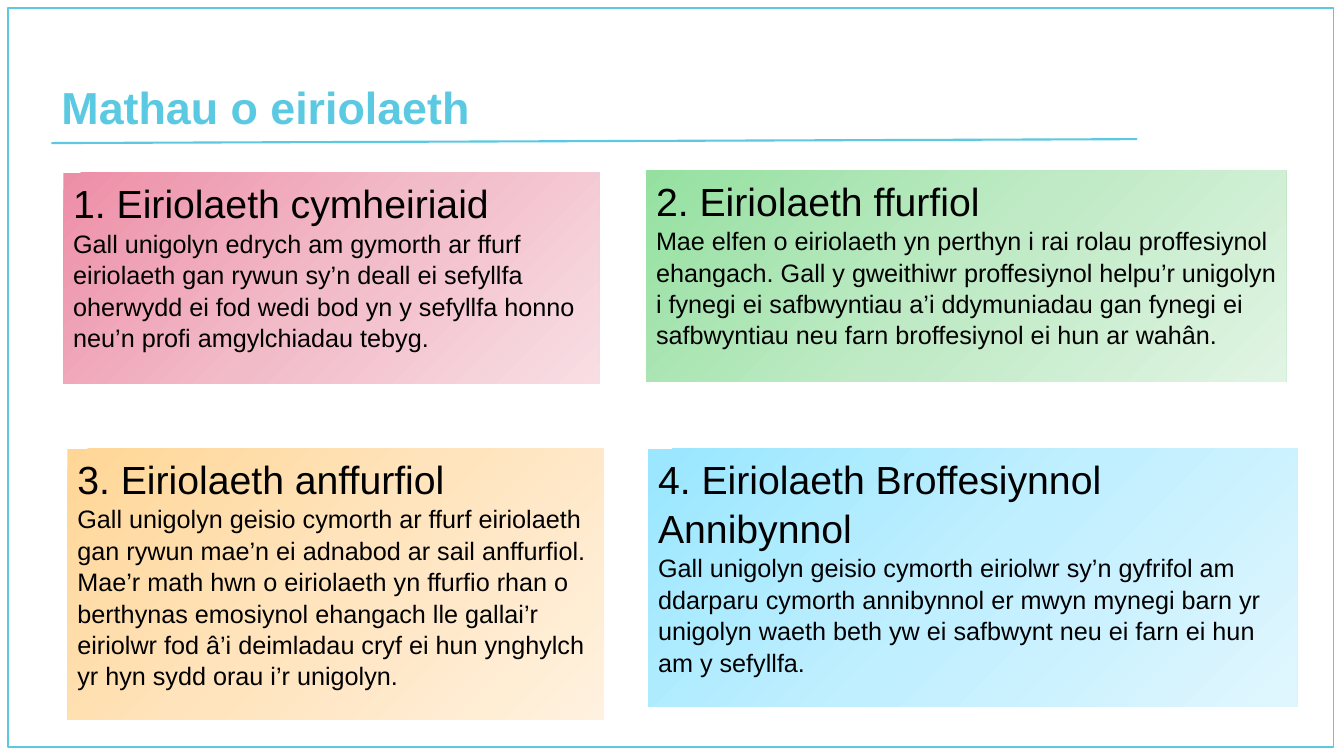
from copy import deepcopy
from dataclasses import dataclass

from pptx import Presentation
from pptx.dml.color import RGBColor as Rgb
from pptx.enum.shapes import MSO_CONNECTOR as Connector, MSO_SHAPE as Shape
from pptx.enum.text import MSO_ANCHOR as Anchor, PP_ALIGN as Align
from pptx.oxml.ns import qn
from pptx.util import Pt
from lxml.etree import SubElement


@dataclass(frozen=True)
class Theme:
    font: str = "Arial"
    accent: str = "5CC9E3"
    ink: str = "000000"
    pink: tuple = ("ED8EA7", "F2BBC8", "F8DEE4")
    green: tuple = ("95E0A0", "BFEAC5", "E0F4E3")
    orange: tuple = ("FFD696", "FFE4BE", "FFF1DF")
    blue: tuple = ("9AE7FF", "C0EFFF", "E0F6FE")
    title_size: int = 32
    heading_size: int = 28
    body_size: int = 18
    title_spacing: float = 0.9
    card_spacing: float = 1.04


class SlideBuilder:
    def __init__(self, page, theme):
        self.page = page
        self.theme = theme

    def add_text(self, para, text, size, color, bold=False):
        para.alignment = Align.LEFT
        span = para.add_run()
        span.text = text
        span.font.name = self.theme.font
        span.font.size = Pt(size)
        span.font.bold = bold
        span.font.color.rgb = Rgb.from_string(color)

    def rectangle(self, left, top, width, height):
        box = self.page.shapes.add_shape(
            Shape.RECTANGLE, Pt(left), Pt(top), Pt(width), Pt(height))
        box.shadow.inherit = False
        return box

    def frame(self, left, top, width, height):
        box = self.rectangle(left, top, width, height)
        box.fill.background()
        box.line.color.rgb = Rgb.from_string(self.theme.accent)
        box.line.width = Pt(1)

    def rule(self, x1, y1, x2, y2):
        line = self.page.shapes.add_connector(
            Connector.STRAIGHT, Pt(x1), Pt(y1), Pt(x2), Pt(y2))
        line.line.color.rgb = Rgb.from_string(self.theme.accent)
        line.line.width = Pt(1.5)
        SubElement(line._element.spPr, qn("a:effectLst"))

    def title(self, text, left, top, width, height):
        box = self.page.shapes.title
        box.left, box.top = Pt(left), Pt(top)
        box.width, box.height = Pt(width), Pt(height)
        box.text_frame.vertical_anchor = Anchor.BOTTOM
        para = box.text_frame.paragraphs[0]
        para.line_spacing = self.theme.title_spacing
        self.add_text(para, text, self.theme.title_size, self.theme.accent, bold=True)

    def gradient(self, box, colors):
        """Fill the box with three even stops, running to the lower right."""
        box.fill.gradient()
        stop_list = box._element.spPr.find(qn("a:gradFill")).find(qn("a:gsLst"))
        stop_list.append(deepcopy(stop_list[-1]))
        for index, (stop, color) in enumerate(zip(box.fill.gradient_stops, colors)):
            stop.position = index / 2
            stop.color.rgb = Rgb.from_string(color)
        box.fill.gradient_angle = 315

    def card(self, heading, body, colors, left, top, width, height):
        box = self.rectangle(left, top, width, height)
        self.gradient(box, colors)
        box.line.fill.background()
        text_frame = box.text_frame
        text_frame.word_wrap = True
        text_frame.vertical_anchor = Anchor.TOP
        paras = text_frame.paragraphs[0], text_frame.add_paragraph()
        sizes = self.theme.heading_size, self.theme.body_size
        for para, text, size in zip(paras, (heading, body), sizes):
            para.line_spacing = self.theme.card_spacing
            self.add_text(para, text, size, self.theme.ink)


def main():
    deck = Presentation()
    deck.slide_width, deck.slide_height = Pt(960), Pt(540)
    theme = Theme()
    slide = SlideBuilder(deck.slides.add_slide(deck.slide_layouts[5]), theme)

    slide.rule(36.7, 102.2, 812.2, 99.4)
    slide.frame(5.8, 5.8, 946.8, 527.8)
    slide.title("Mathau o eiriolaeth", 36.7, 20.9, 561.6, 78.5)

    cards = [
        ("1. Eiriolaeth cymheiriaid",
         "Gall unigolyn edrych am gymorth ar ffurf eiriolaeth gan rywun sy’n deall "
         "ei sefyllfa oherwydd ei fod wedi bod yn y sefyllfa honno neu’n profi "
         "amgylchiadau tebyg.",
         theme.pink, 45.2, 123.5, 383.2, 150.5),
        ("2. Eiriolaeth ffurfiol",
         "Mae elfen o eiriolaeth yn perthyn i rai rolau proffesiynol ehangach. "
         "Gall y gweithiwr proffesiynol helpu’r unigolyn i fynegi ei safbwyntiau "
         "a’i ddymuniadau gan fynegi ei safbwyntiau neu farn broffesiynol ei hun "
         "ar wahân.",
         theme.green, 461.5, 121.7, 457.2, 150.5),
        ("3. Eiriolaeth anffurfiol",
         "Gall unigolyn geisio cymorth ar ffurf eiriolaeth gan rywun mae’n ei "
         "adnabod ar sail anffurfiol. Mae’r math hwn o eiriolaeth yn ffurfio rhan "
         "o berthynas emosiynol ehangach lle gallai’r eiriolwr fod â’i deimladau "
         "cryf ei hun ynghylch yr hyn sydd orau i’r unigolyn.",
         theme.orange, 48.2, 320.4, 383.2, 193.7),
        ("4. Eiriolaeth Broffesiynnol Annibynnol",
         "Gall unigolyn geisio cymorth eiriolwr sy’n gyfrifol am ddarparu cymorth "
         "annibynnol er mwyn mynegi barn yr unigolyn waeth beth yw ei safbwynt neu "
         "ei farn ei hun am y sefyllfa.",
         theme.blue, 463, 320.4, 463.7, 184.3),
    ]
    for card in cards:
        slide.card(*card)

    deck.save("out.pptx")


if __name__ == "__main__":
    main()
